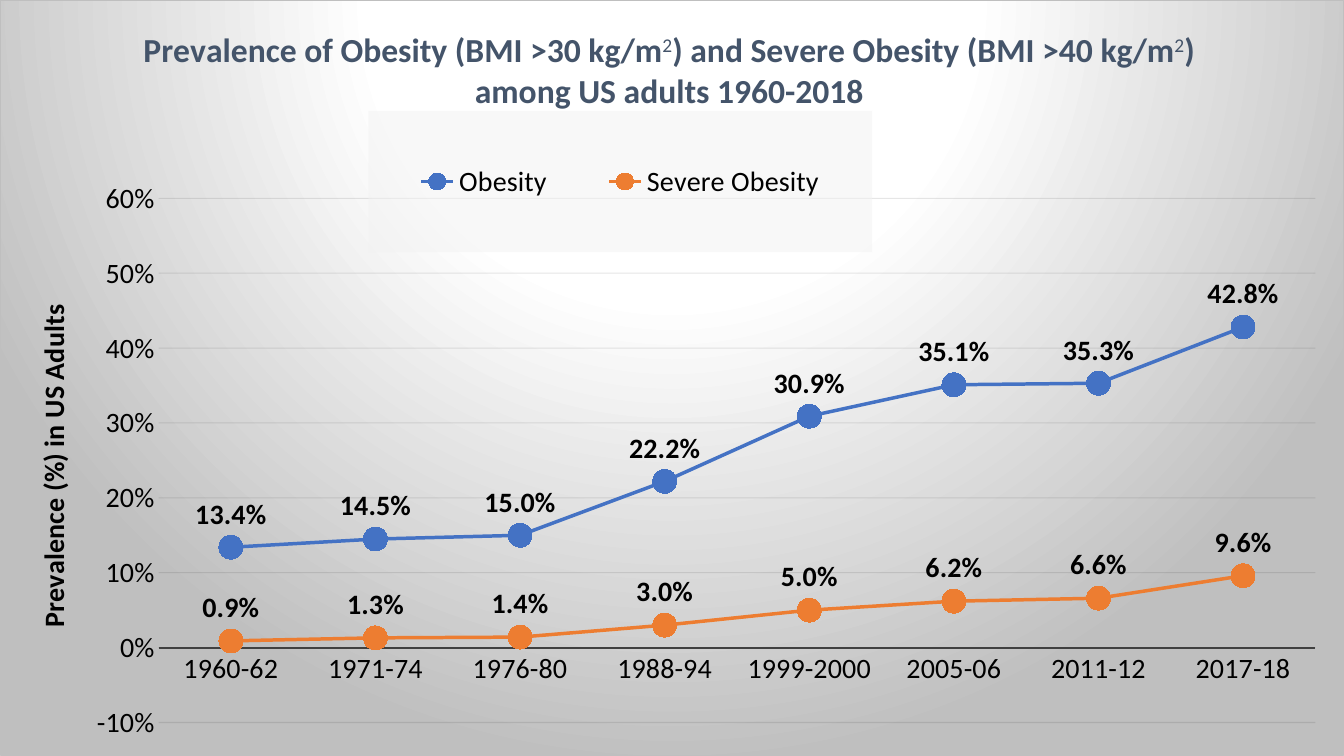
from dataclasses import dataclass

from lxml.etree import SubElement
from pptx import Presentation
from pptx.chart.data import CategoryChartData
from pptx.dml.color import RGBColor
from pptx.enum.chart import XL_CHART_TYPE as ChartType
from pptx.enum.chart import XL_LABEL_POSITION as LabelPosition
from pptx.enum.chart import XL_LEGEND_POSITION as LegendPosition
from pptx.enum.chart import XL_MARKER_STYLE as MarkerStyle
from pptx.enum.chart import XL_TICK_MARK as TickMark
from pptx.oxml import parse_xml
from pptx.oxml.ns import nsdecls, qn
from pptx.util import Pt


@dataclass(frozen=True)
class Theme:
    """Colours and type sizes of the slide."""
    font: str = "Calibri"
    text: str = "000000"
    title: str = "44546A"
    axis: str = "404040"
    grid: str = "0D0D0D"
    legend: str = "F2F2F2"
    light: str = "FFFFFF"
    dark: str = "BFBFBF"
    title_size: int = 24
    text_size: int = 20


THEME = Theme()
WIDTH, HEIGHT = 960, 540
PERIODS = ("1960-62", "1971-74", "1976-80", "1988-94",
           "1999-2000", "2005-06", "2011-12", "2017-18")
PREVALENCE = {
    "Obesity": ("4472C4", (0.134, 0.145, 0.15, 0.222, 0.309, 0.351, 0.353, 0.428)),
    "Severe Obesity": ("ED7D31", (0.009, 0.013, 0.014, 0.03, 0.05, 0.062, 0.066, 0.096)),
}
TITLE_LINES = (
    (("Prevalence of Obesity (BMI >30 kg/m", False), ("2", True),
     (") and Severe Obesity (BMI >40 kg/m", False), ("2", True), (")", False)),
    (("among US adults 1960-2018", False),),
)


def set_font(font, size=THEME.text_size, color=THEME.text, bold=False):
    """Format a font in the slide's typeface."""
    font.name, font.size, font.bold = THEME.font, Pt(size), bold
    font.color.rgb = RGBColor.from_string(color)


def set_line(line, color, width):
    """Give a line a solid colour and a width in points."""
    line.color.rgb = RGBColor.from_string(color)
    line.width = Pt(width)


def set_layout(element, index, left, top, width=None, height=None, inner=False):
    """Place a chart part at a position given in points."""
    for old in element.findall(qn("c:layout")):
        element.remove(old)
    layout = parse_xml(f"<c:layout {nsdecls('c')}><c:manualLayout/></c:layout>")
    settings = [("layoutTarget", "inner")] if inner else []
    settings += [("xMode", "edge"), ("yMode", "edge"),
                 ("x", left / WIDTH), ("y", top / HEIGHT)]
    if width:
        settings += [("w", width / WIDTH), ("h", height / HEIGHT)]
    for tag, value in settings:
        SubElement(layout[0], qn(f"c:{tag}")).set("val", str(value))
    element.insert(index, layout)


def add_fill(element, fill, line="<a:ln><a:noFill/></a:ln>"):
    """Insert shape properties ahead of a chart part's text properties."""
    properties = parse_xml(f"<c:spPr {nsdecls('c', 'a')}>{fill}{line}</c:spPr>")
    element.find(qn("c:txPr")).addprevious(properties)


def add_background(chart):
    """Fill the chart with a circular gradient and a thin border."""
    stops = ((0, THEME.light), (39, THEME.light), (100, THEME.dark))
    stop_xml = "".join(f'<a:gs pos="{place * 1000}"><a:srgbClr val="{color}"/></a:gs>'
                       for place, color in stops)
    gradient = (f'<a:gradFill><a:gsLst>{stop_xml}</a:gsLst><a:path path="circle">'
                '<a:fillToRect l="50000" t="-80000" r="50000" b="180000"/>'
                '</a:path></a:gradFill>')
    border = (f'<a:ln w="{Pt(0.75)}"><a:solidFill><a:srgbClr val="{THEME.dark}"/>'
              '</a:solidFill></a:ln>')
    add_fill(chart.element, gradient, border)


def add_title(chart):
    """Write the two-line chart title with raised exponents."""
    chart.has_title = True
    frame = chart.chart_title.text_frame
    for number, pieces in enumerate(TITLE_LINES):
        paragraph = frame.add_paragraph() if number else frame.paragraphs[0]
        for text, raised in pieces:
            run = paragraph.add_run()
            run.text = text
            set_font(run.font, THEME.title_size, THEME.title, not raised)
            if raised:
                run.font._element.set("baseline", "30000")
    chart.chart_title.include_in_layout = False
    set_layout(chart.chart_title._element, 1, 100, 18)


def format_axes(chart):
    """Format both axes, the gridlines and the value axis title."""
    category_axis, value_axis = chart.category_axis, chart.value_axis
    for axis in (category_axis, value_axis):
        axis.major_tick_mark = axis.minor_tick_mark = TickMark.NONE
        set_font(axis.tick_labels.font)
    set_line(category_axis.format.line, THEME.axis, 1.5)
    value_axis.format.line.fill.background()
    value_axis.minimum_scale, value_axis.maximum_scale = -0.1, 0.6
    value_axis.major_unit = 0.1
    value_axis.tick_labels.number_format = "0%"
    value_axis.tick_labels.number_format_is_linked = False
    gridlines = value_axis.major_gridlines.format.line
    set_line(gridlines, THEME.grid, 0.75)
    grid_color = value_axis.major_gridlines._xAx.find(
        f"{qn('c:majorGridlines')}//{qn('a:srgbClr')}")
    SubElement(grid_color, qn("a:alpha")).set("val", "10000")
    title = value_axis.axis_title
    title.text_frame.text = "Prevalence (%) in US Adults"
    set_font(title.text_frame.paragraphs[0].runs[0].font, bold=True)
    title._element.find(f".//{qn('a:bodyPr')}").set("rot", "-5400000")
    set_layout(title._element, 1, 20, 214)


def format_series(series, color):
    """Format one line with its round markers and value labels."""
    series.smooth = False
    set_line(series.format.line, color, 2.5)
    marker = series.marker
    marker.style, marker.size = MarkerStyle.CIRCLE, 17
    marker.format.fill.solid()
    marker.format.fill.fore_color.rgb = RGBColor.from_string(color)
    set_line(marker.format.line, color, 0.75)
    labels = series.data_labels
    labels.show_value = True
    labels.position = LabelPosition.ABOVE
    labels.number_format, labels.number_format_is_linked = "0.0%", False
    set_font(labels.font, bold=True)


def add_legend(chart):
    """Show the legend on a translucent panel above the plot."""
    chart.has_legend = True
    legend = chart.legend
    legend.position = LegendPosition.TOP
    legend.include_in_layout = False
    set_font(legend.font)
    set_layout(legend._element, 1, 263, 79, 360, 101)
    add_fill(legend._element, f'<a:solidFill><a:srgbClr val="{THEME.legend}">'
             '<a:alpha val="50000"/></a:srgbClr></a:solidFill>')


def add_prevalence_chart(slide):
    """Add the line chart that covers the slide."""
    data = CategoryChartData(number_format="0.0%")
    data.categories = PERIODS
    for name, (_, values) in PREVALENCE.items():
        data.add_series(name, values)
    chart = slide.shapes.add_chart(ChartType.LINE_MARKERS, 0, 0,
                                   Pt(WIDTH), Pt(HEIGHT), data).chart
    set_font(chart.font)
    add_background(chart)
    add_title(chart)
    format_axes(chart)
    chart.plots[0].vary_by_categories = False
    for series in chart.plots[0].series:
        format_series(series, PREVALENCE[series.name][0])
    add_legend(chart)
    plot_area = chart.element.find(f".//{qn('c:plotArea')}")
    set_layout(plot_area, 0, 113, 141.5, 827, 375, inner=True)


def main():
    """Build and save the slide."""
    presentation = Presentation()
    presentation.slide_width, presentation.slide_height = Pt(WIDTH), Pt(HEIGHT)
    slide = presentation.slides.add_slide(presentation.slide_layouts[6])
    add_prevalence_chart(slide)
    presentation.save("out.pptx")


if __name__ == "__main__":
    main()
